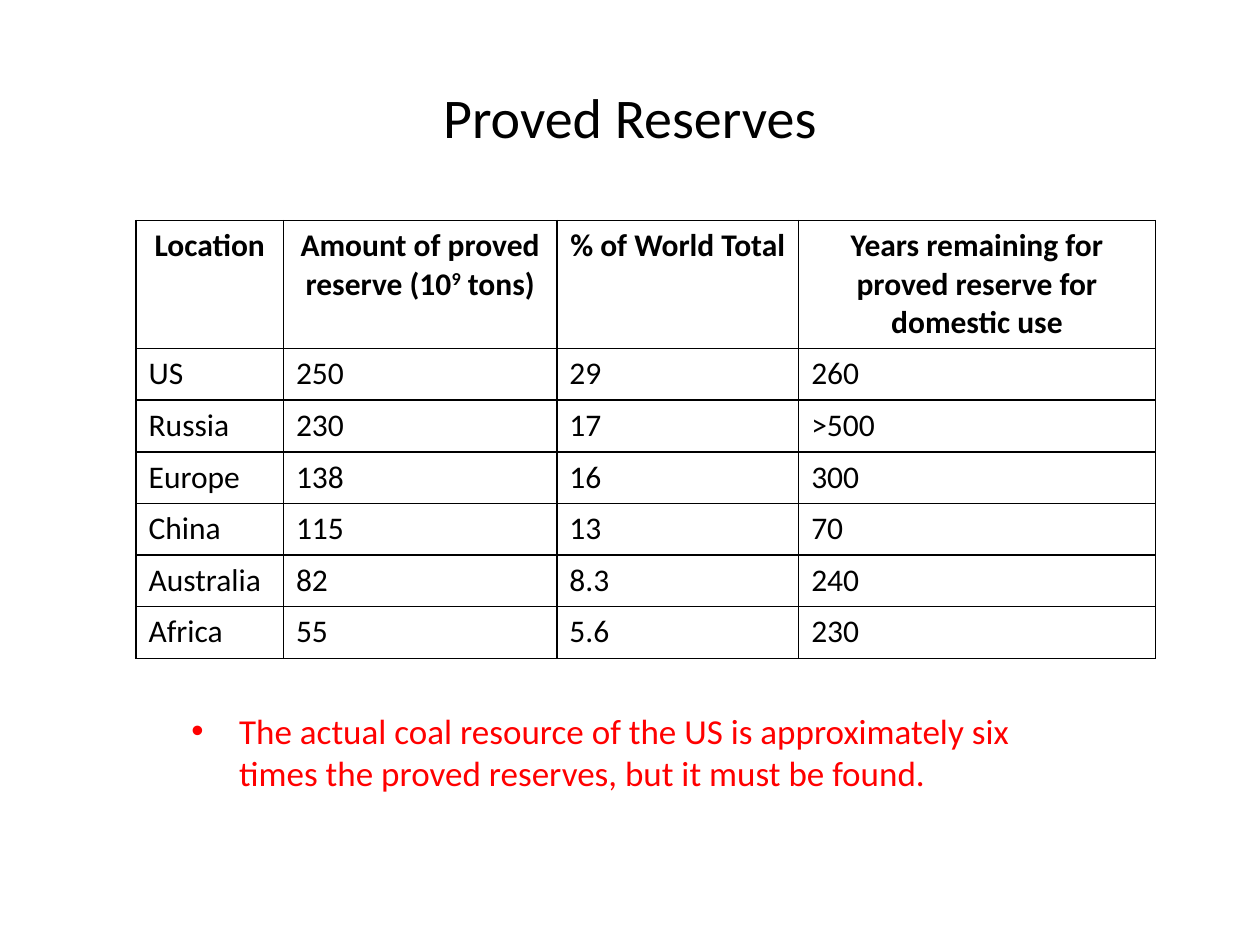
import pptx
import pptx.util
import pptx.dml.color
import pptx.enum.text
from lxml import etree
from pptx.oxml.ns import qn

Inches, Pt = pptx.util.Inches, pptx.util.Pt
Align = pptx.enum.text.PP_ALIGN
COLORS = {"ink": "000000", "note": "FF0000"}


def style(par, size, color, bold=False):
    for run in par.runs:
        run.font.name = "Calibri"
        run.font.size = Pt(size)
        run.font.bold = bold
        run.font.color.rgb = pptx.dml.color.RGBColor.from_string(COLORS[color])


def border(cell):
    props = cell._tc.get_or_add_tcPr()
    for side in ("a:lnL", "a:lnR", "a:lnT", "a:lnB"):
        line = etree.SubElement(props, qn(side), w=str(Pt(1)))
        fill = etree.SubElement(line, qn("a:solidFill"))
        etree.SubElement(fill, qn("a:srgbClr"), val=COLORS["ink"])


deck = pptx.Presentation()
deck.slide_width, deck.slide_height = Inches(10), Inches(7.5)
slide = deck.slides.add_slide(deck.slide_layouts[5])

# Title
title = slide.shapes.title
title.left, title.top = Inches(0.5), Inches(0.3)
title.width, title.height = Inches(9), Inches(1.25)
title.text_frame.text = "Proved Reserves"
title.text_frame.vertical_anchor = pptx.enum.text.MSO_ANCHOR.MIDDLE
head = title.text_frame.paragraphs[0]
head.alignment = Align.CENTER
style(head, 32, "ink")

# Reserves table; text between carets is superscript
rows = [
    ("Location", "Amount of proved reserve (10^9^ tons)", "% of World Total",
     "Years remaining for proved reserve for domestic use"),
    ("US", "250", "29", "260"),
    ("Russia", "230", "17", ">500"),
    ("Europe", "138", "16", "300"),
    ("China", "115", "13", "70"),
    ("Australia", "82", "8.3", "240"),
    ("Africa", "55", "5.6", "230"),
]
widths = [1.17, 2.17, 1.92, 2.83]
table = slide.shapes.add_table(len(rows), len(widths), Inches(1.08), Inches(1.75),
                               Inches(8.08), Inches(3.43)).table
table.horz_banding = False
for col, width in zip(table.columns, widths):
    col.width = Inches(width)
for r, row in enumerate(rows):
    table.rows[r].height = Inches(0.41 if r else 0.94)
    for c, text in enumerate(row):
        cell = table.cell(r, c)
        par = cell.text_frame.paragraphs[0]
        for i, part in enumerate(text.split("^")):
            run = par.add_run()
            run.text = part
            if i % 2:
                run.font._element.set("baseline", "30000")
        par.alignment = Align.LEFT if r else Align.CENTER
        style(par, 18, "ink", bold=r == 0)
        border(cell)
        cell.fill.background()

# Bulleted note
note = slide.shapes.add_textbox(Inches(1.42), Inches(5.58), Inches(7), Inches(0.77))
frame = note.text_frame
frame.text = ("The actual coal resource of the US is approximately six times "
              "the proved reserves, but it must be found.")
frame.word_wrap = True
frame.auto_size = pptx.enum.text.MSO_AUTO_SIZE.SHAPE_TO_FIT_TEXT
par = frame.paragraphs[0]
style(par, 20, "note")
props = par._p.get_or_add_pPr()
props.set("marL", str(Inches(0.38)))
props.set("indent", str(-Inches(0.38)))
etree.SubElement(props, qn("a:buFont"), typeface="Arial")
etree.SubElement(props, qn("a:buChar"), char="•")

deck.save("out.pptx")
